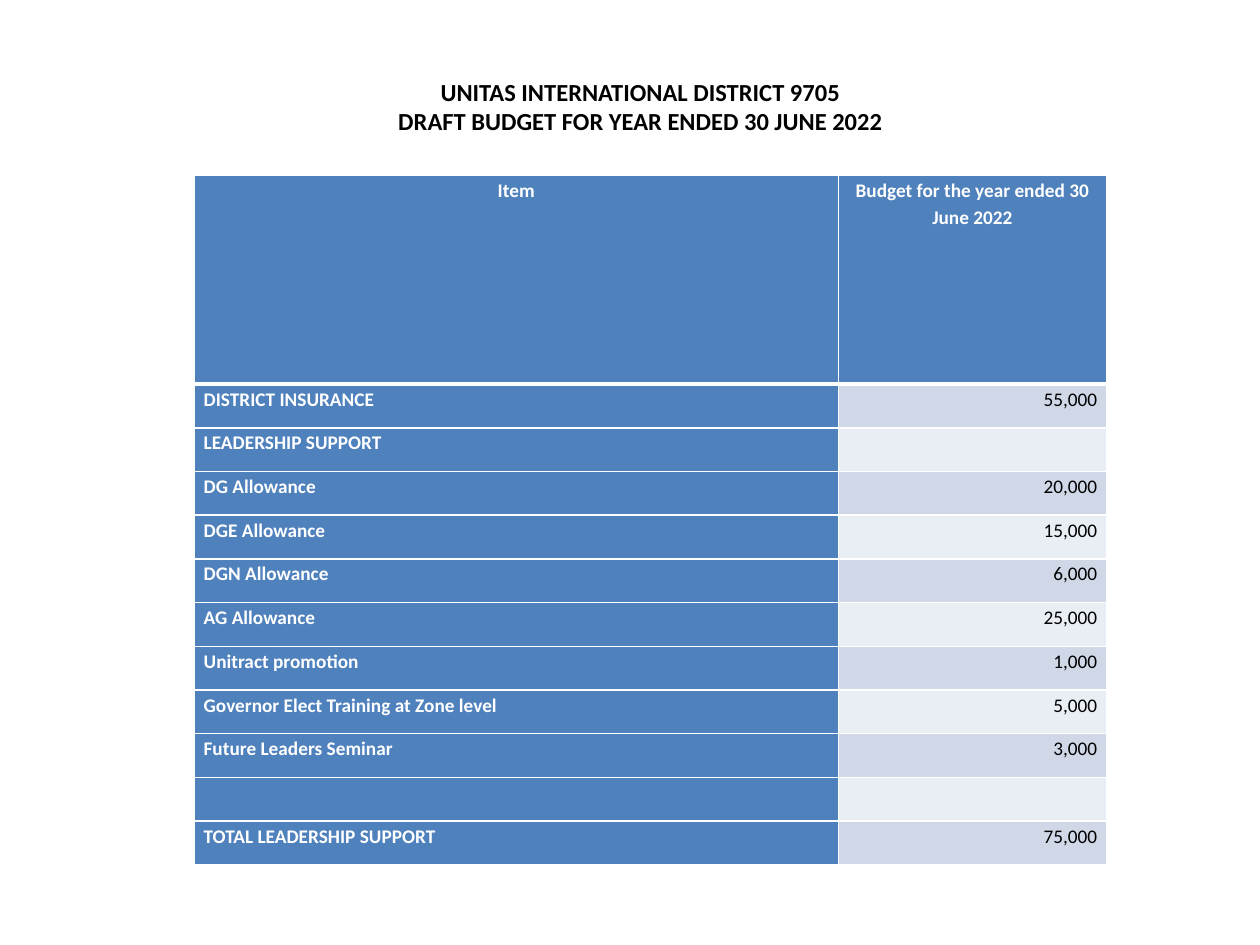
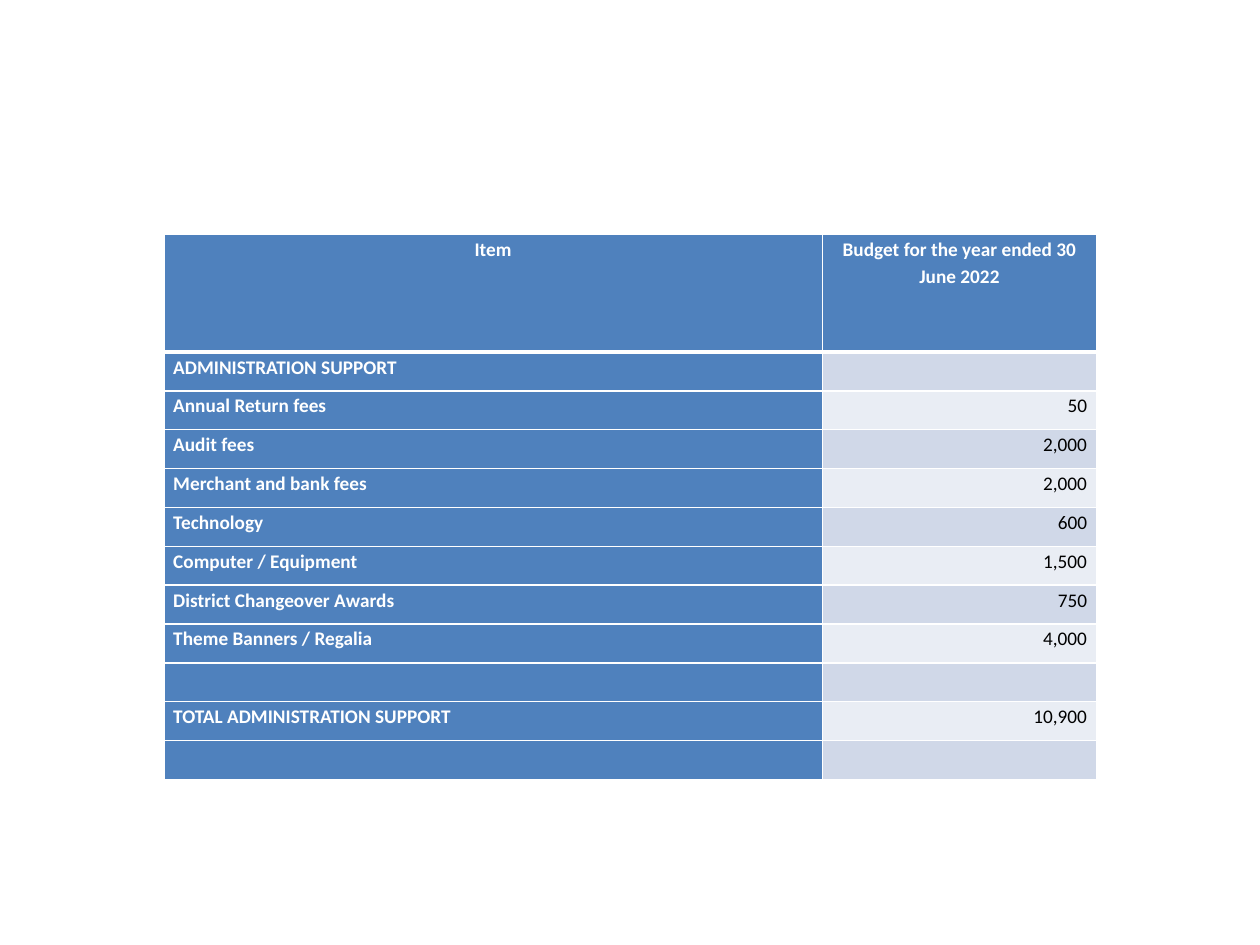
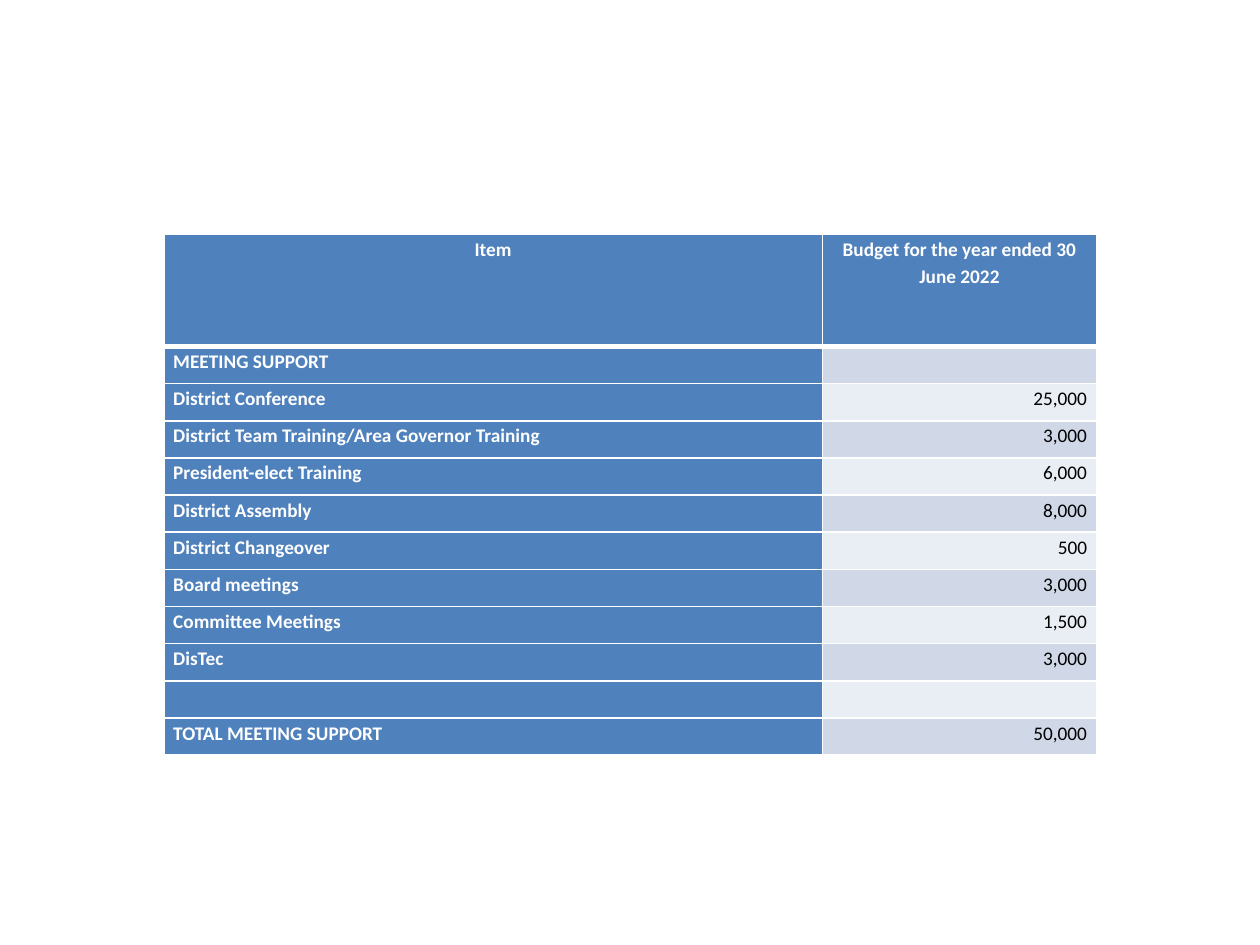
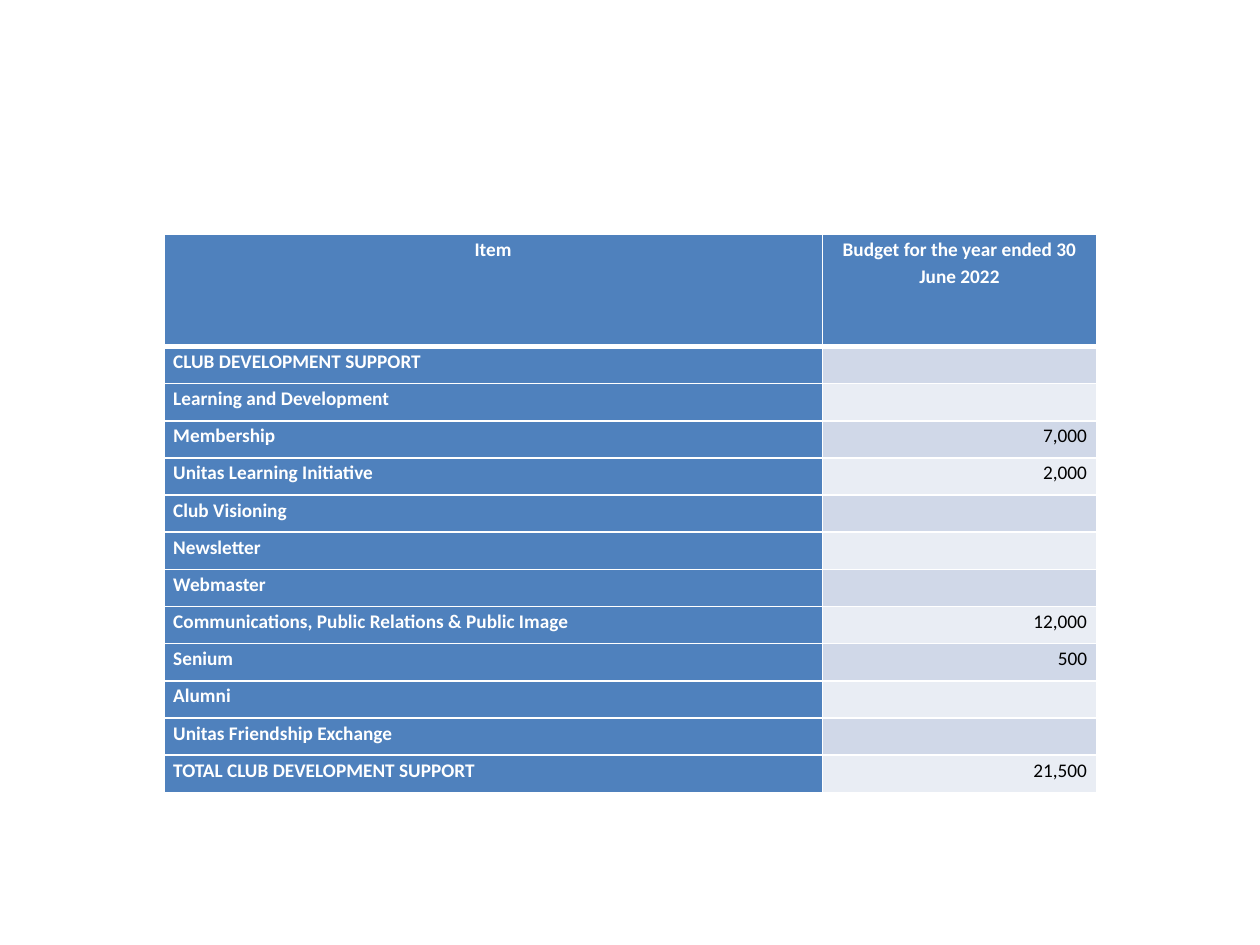
from dataclasses import dataclass

from lxml import etree
from pptx import Presentation
from pptx.dml.color import RGBColor
from pptx.enum.text import MSO_ANCHOR, MSO_AUTO_SIZE, PP_ALIGN
from pptx.oxml.ns import qn
from pptx.util import Pt

LEFT, CENTER, RIGHT = PP_ALIGN.LEFT, PP_ALIGN.CENTER, PP_ALIGN.RIGHT
MIDDLE = MSO_ANCHOR.MIDDLE
GROW = MSO_AUTO_SIZE.SHAPE_TO_FIT_TEXT
TITLE_ONLY, BLANK = 5, 6


@dataclass(frozen=True)
class Theme:
    font: str = "Calibri"
    title_size: int = 14
    cell_size: int = 11
    line_spacing: float = 1.15
    cell_inset: float = 5.4
    thin: int = 1
    thick: int = 3
    white: str = "FFFFFF"
    black: str = "000000"
    blue: str = "4F81BD"
    bands: tuple = ("D0D8E8", "E9EDF4")


@dataclass(frozen=True)
class Grid:
    """Table position, column widths and row heights in points."""
    left: float
    top: float
    cols: tuple
    header: float
    row: float


THEME = Theme()

# Budget content
TITLE = ("UNITAS INTERNATIONAL DISTRICT 9705\n"
         "DRAFT BUDGET FOR YEAR ENDED 30 JUNE 2022")
HEADER = ("Item", "Budget for the year ended 30 June 2022")
LEADERSHIP = [
    ("DISTRICT INSURANCE", "55,000"),
    ("LEADERSHIP SUPPORT", ""),
    ("DG Allowance", "20,000"),
    ("DGE Allowance", "15,000"),
    ("DGN Allowance", "6,000"),
    ("AG Allowance", "25,000"),
    ("Unitract promotion", "1,000"),
    ("Governor Elect Training at Zone level", "5,000"),
    ("Future Leaders Seminar", "3,000"),
    ("", ""),
    ("TOTAL LEADERSHIP SUPPORT", "75,000"),
]
ADMINISTRATION = [
    ("ADMINISTRATION SUPPORT", ""),
    ("Annual Return fees", "50"),
    ("Audit fees", "2,000"),
    ("Merchant and bank fees", "2,000"),
    ("Technology", "600"),
    ("Computer / Equipment", "1,500"),
    ("District Changeover Awards", "750"),
    ("Theme Banners / Regalia", "4,000"),
    ("", ""),
    ("TOTAL ADMINISTRATION SUPPORT", "10,900"),
    ("", ""),
]
MEETING = [
    ("MEETING SUPPORT", ""),
    ("District Conference", "25,000"),
    ("District Team Training/Area Governor Training", "3,000"),
    ("President-elect Training", "6,000"),
    ("District Assembly", "8,000"),
    ("District Changeover", "500"),
    ("Board meetings", "3,000"),
    ("Committee Meetings", "1,500"),
    ("DisTec", "3,000"),
    ("", ""),
    ("TOTAL MEETING SUPPORT", "50,000"),
]
CLUB_DEVELOPMENT = [
    ("CLUB DEVELOPMENT SUPPORT", ""),
    ("Learning and Development", ""),
    ("Membership", "7,000"),
    ("Unitas Learning Initiative", "2,000"),
    ("Club Visioning", ""),
    ("Newsletter", ""),
    ("Webmaster", ""),
    ("Communications, Public Relations & Public Image", "12,000"),
    ("Senium", "500"),
    ("Alumni", ""),
    ("Unitas Friendship Exchange", ""),
    ("TOTAL CLUB DEVELOPMENT SUPPORT", "21,500"),
]

# Table layouts
FIRST_GRID = Grid(111, 100, (368, 153.4), 119.5, 25)
WIDE = (93.6, 134, (376.4, 156.6))
ADMINISTRATION_GRID = Grid(*WIDE, 67.2, 22.2)
COMPACT_GRID = Grid(*WIDE, 64, 21.25)


def format_run(r, size, color, bold):
    r.font.name = THEME.font
    r.font.size = Pt(size)
    r.font.bold = bold
    r.font.color.rgb = RGBColor.from_string(color)


def set_title(s, text, left, top, width, height):
    sp = s.shapes.title
    sp.left, sp.top, sp.width, sp.height = map(Pt, (left, top, width, height))
    tf = sp.text_frame
    tf.text = text
    tf.vertical_anchor = MIDDLE
    tf.auto_size = GROW
    for p in tf.paragraphs:
        p.alignment = CENTER
        for r in p.runs:
            format_run(r, THEME.title_size, THEME.black, True)


def set_borders(cell, top, bottom):
    """Draw white cell borders; line elements must come before the fill."""
    tc_pr = cell._tc.get_or_add_tcPr()
    widths = {"a:lnL": THEME.thin, "a:lnR": THEME.thin,
              "a:lnT": top, "a:lnB": bottom}
    for i, (tag, width) in enumerate(widths.items()):
        ln = etree.Element(qn(tag), w=str(Pt(width)))
        fill = etree.SubElement(ln, qn("a:solidFill"))
        etree.SubElement(fill, qn("a:srgbClr"), val=THEME.white)
        tc_pr.insert(i, ln)


def fill_cell(cell, text, fill, color, bold, align):
    cell.fill.solid()
    cell.fill.fore_color.rgb = RGBColor.from_string(fill)
    cell.margin_left = cell.margin_right = Pt(THEME.cell_inset)
    cell.margin_top = cell.margin_bottom = 0
    cell.text_frame.text = text
    p = cell.text_frame.paragraphs[0]
    p.alignment = align
    p.line_spacing = THEME.line_spacing
    for r in p.runs:
        format_run(r, THEME.cell_size, color, bold)
    if not text:
        # An empty cell needs the small size too, or its row grows
        p._p.get_or_add_endParaRPr().set("sz", str(THEME.cell_size * 100))


def add_budget_table(s, grid, items):
    rows = [HEADER, *items]
    height = grid.header + grid.row * len(items)
    frame = s.shapes.add_table(len(rows), len(HEADER), Pt(grid.left), Pt(grid.top),
                               Pt(sum(grid.cols)), Pt(height))
    table = frame.table
    table.first_col = True
    for column, width in zip(table.columns, grid.cols):
        column.width = Pt(width)
    for i, row in enumerate(rows):
        is_header = i == 0
        table.rows[i].height = Pt(grid.header if is_header else grid.row)
        for j, text in enumerate(row):
            cell = table.cell(i, j)
            if is_header or j == 0:
                align = CENTER if is_header else LEFT
                fill_cell(cell, text, THEME.blue, THEME.white, True, align)
            else:
                band = THEME.bands[(i - 1) % 2]
                fill_cell(cell, text, band, THEME.black, False, RIGHT)
            set_borders(cell, top=THEME.thick if i == 1 else THEME.thin,
                        bottom=THEME.thick if is_header else THEME.thin)


def main():
    prs = Presentation()
    prs.slide_width, prs.slide_height = Pt(720), Pt(540)

    # Opening slide with the document title
    s = prs.slides.add_slide(prs.slide_layouts[TITLE_ONLY])
    set_title(s, TITLE, 65.5, 40.3, 601, 41)
    add_budget_table(s, FIRST_GRID, LEADERSHIP)

    # Continuation slides
    for grid, items in ((ADMINISTRATION_GRID, ADMINISTRATION),
                        (COMPACT_GRID, MEETING),
                        (COMPACT_GRID, CLUB_DEVELOPMENT)):
        s = prs.slides.add_slide(prs.slide_layouts[BLANK])
        add_budget_table(s, grid, items)

    prs.save("out.pptx")


if __name__ == "__main__":
    main()
